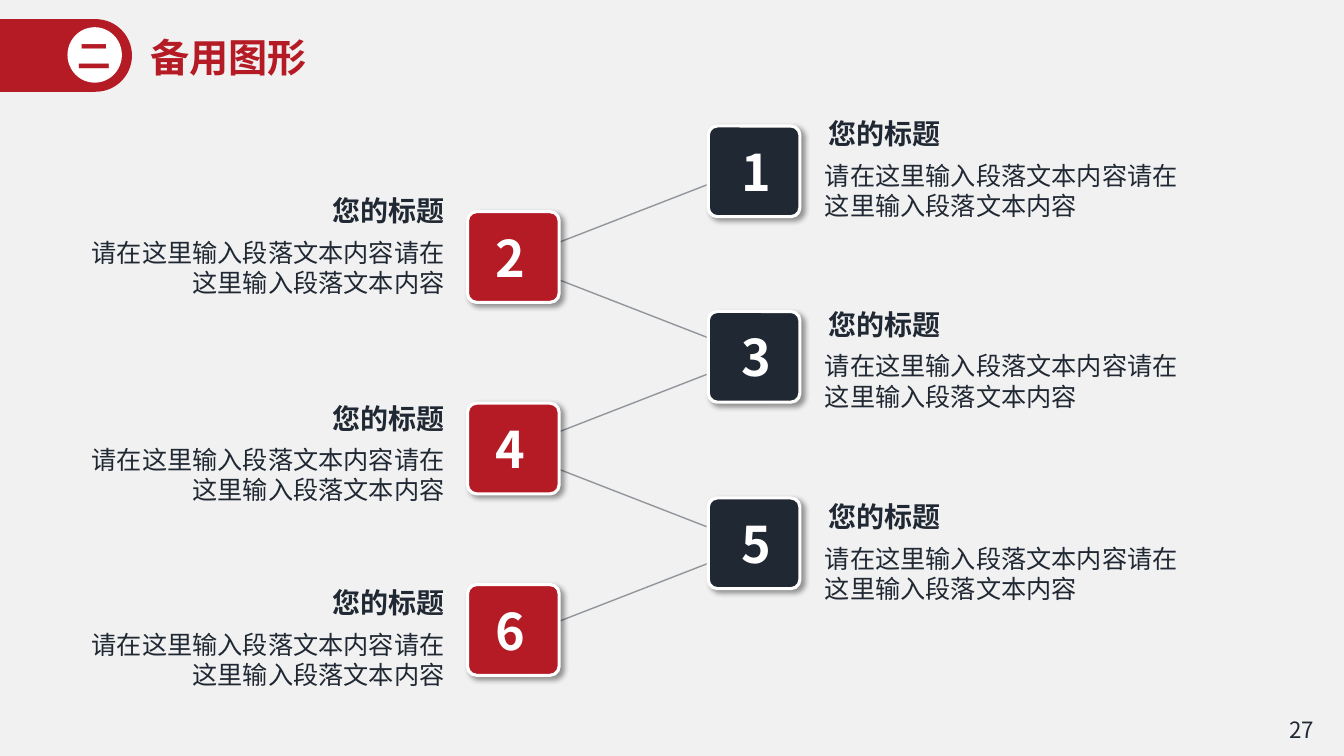
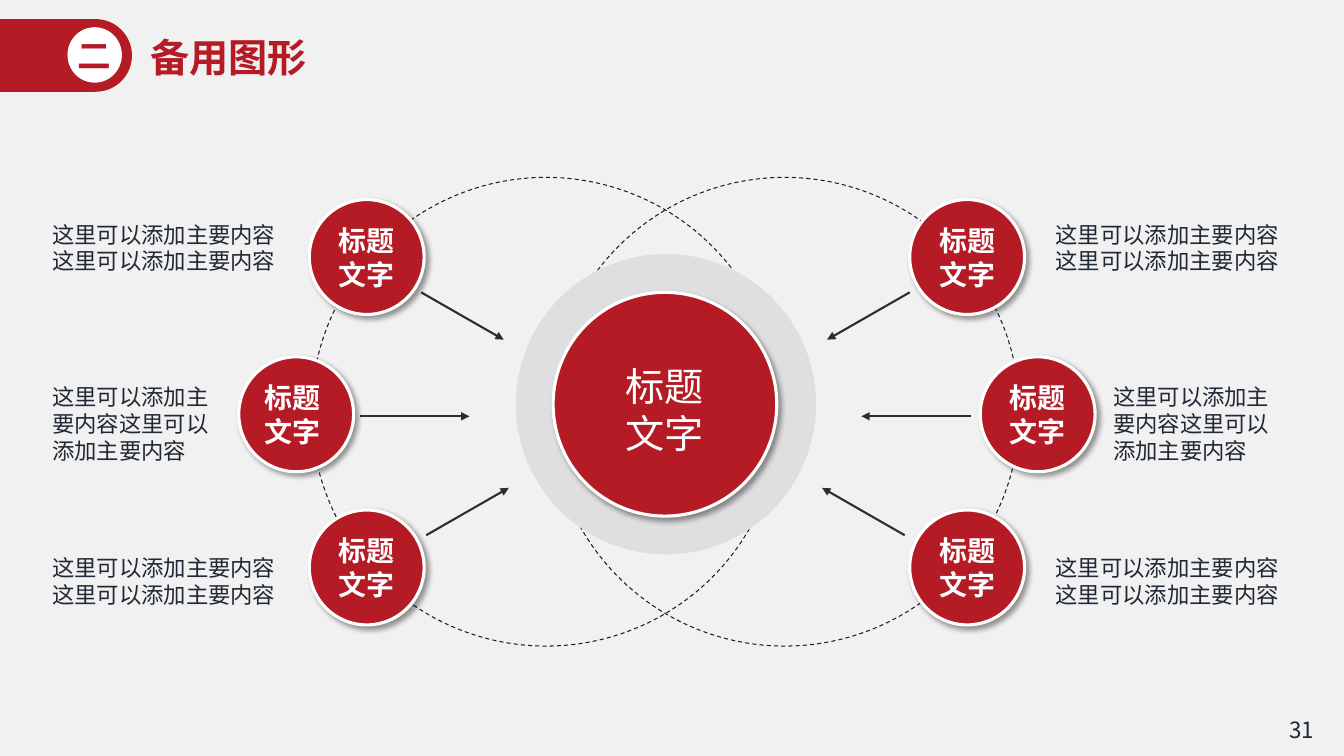
from math import cos, pi, sin

from lxml.etree import SubElement
from pptx import Presentation
from pptx.dml.color import RGBColor
from pptx.enum.dml import MSO_LINE
from pptx.enum.shapes import MSO_CONNECTOR, MSO_SHAPE
from pptx.enum.text import MSO_ANCHOR, MSO_AUTO_SIZE, PP_ALIGN
from pptx.oxml.ns import qn
from pptx.util import Inches, Pt

RED = RGBColor(0xB5, 0x1B, 0x25)
NAVY = RGBColor(0x20, 0x28, 0x33)
WHITE = RGBColor(0xFF, 0xFF, 0xFF)
PAPER = RGBColor(0xF1, 0xF1, 0xF1)
HALO = RGBColor(0xDF, 0xDF, 0xE1)
GREY = RGBColor(0x91, 0x95, 0x9C)
ARROW = RGBColor(0x2E, 0x2C, 0x2C)
RING = RGBColor(0x18, 0x1E, 0x26)
FONT = "Noto Sans CJK SC"

HEADING = {"size": Pt(20), "bold": True}
BADGE = {"size": Pt(20), "bold": True, "color": WHITE}
NUMBER = {"size": Pt(36), "bold": True, "color": WHITE}


class Deck:
    """Holds the style and the slide being drawn."""

    def __init__(self):
        self.prs = Presentation()
        self.prs.slide_width, self.prs.slide_height = Inches(13.34), Inches(7.5)
        fill = self.prs.slide_master.background.fill
        fill.solid()
        fill.fore_color.rgb = PAPER

    def new_slide(self, section, title, page):
        self.s = self.prs.slides.add_slide(self.prs.slide_layouts[5])
        sp = self.s.shapes.title
        sp.left, sp.top, sp.width, sp.height = map(Inches, (1.39, 0.28, 3.05, 0.57))
        self.set_text(sp.text_frame, title, {"size": Pt(28), "bold": True, "color": RED})
        self.tag()
        self.shape(MSO_SHAPE.OVAL, (0.67, 0.27, 0.54, 0.55), WHITE, text=section,
                   style={"size": Pt(24), "bold": True, "color": RED})
        self.text((12.67, 7.06, 0.5, 0.37), page, {"size": Pt(16)}, PP_ALIGN.CENTER)

    def set_text(self, tf, text, style, align=PP_ALIGN.LEFT, **frame):
        frame = {"word_wrap": True, "auto_size": MSO_AUTO_SIZE.NONE,
                 "vertical_anchor": MSO_ANCHOR.TOP, **frame}
        for name, value in frame.items():
            setattr(tf, name, value)
        p = tf.paragraphs[0]
        p.alignment = align
        r = p.add_run()
        r.text = text
        font = {"name": FONT, "bold": False, **style}
        r.font.color.rgb = font.pop("color", NAVY)
        for name, value in font.items():
            setattr(r.font, name, value)
        SubElement(r.font._element, qn("a:ea"), typeface=FONT)

    def text(self, box, text, style, align=PP_ALIGN.LEFT):
        sp = self.s.shapes.add_textbox(*map(Inches, box))
        self.set_text(sp.text_frame, text, style, align)

    def tag(self):
        # Band from the left edge with a half-round right end
        radius, cx, cy = 0.36, 0.95, 0.55
        angles = [pi * (i / 40 - 0.5) for i in range(41)]
        arc = [(Inches(cx + radius * cos(a)), Inches(cy + radius * sin(a))) for a in angles]
        builder = self.s.shapes.build_freeform(0, Inches(cy - radius))
        builder.add_line_segments(arc + [(0, Inches(cy + radius))])
        self.paint(builder.convert_to_shape(), RED)

    def paint(self, sp, fill=None):
        sp.shadow.inherit = False
        sp.line.fill.background()
        if fill is None:
            sp.fill.background()
        else:
            sp.fill.solid()
            sp.fill.fore_color.rgb = fill

    def shape(self, kind, box, fill=None, text=None, style=None, margins=(0, 0, 0, 0)):
        sp = self.s.shapes.add_shape(kind, *map(Inches, box))
        self.paint(sp, fill)
        if text:
            sides = ("margin_left", "margin_top", "margin_right", "margin_bottom")
            self.set_text(sp.text_frame, text, style, PP_ALIGN.CENTER,
                          vertical_anchor=MSO_ANCHOR.MIDDLE,
                          **dict(zip(sides, map(Inches, margins))))
        return sp

    def raised(self, *args, **kwargs):
        """A shape with a white rim and a soft shadow."""
        sp = self.shape(*args, **kwargs)
        sp.line.color.rgb = WHITE
        sp.line.width = Pt(2.25)
        effects = sp._element.spPr.find(qn("a:effectLst"))
        shadow = SubElement(effects, qn("a:outerShdw"), blurRad=str(int(Pt(4))),
                            dist=str(int(Pt(3))), dir="2700000", algn="tl",
                            rotWithShape="0")
        color = SubElement(shadow, qn("a:srgbClr"), val="000000")
        SubElement(color, qn("a:alpha"), val="40000")
        return sp

    def ring(self, box):
        sp = self.shape(MSO_SHAPE.OVAL, box)
        sp.line.color.rgb = RING
        sp.line.width = Pt(0)
        sp.line.dash_style = MSO_LINE.DASH

    def line(self, start, end, color, width, arrow=False):
        c = self.s.shapes.add_connector(MSO_CONNECTOR.STRAIGHT, *map(Inches, start + end))
        c.line.color.rgb = color
        c.line.width = Pt(width)
        props = c._element.spPr
        if arrow:
            SubElement(props.find(qn("a:ln")), qn("a:tailEnd"), type="triangle")
        SubElement(props, qn("a:effectLst"))


def zigzag_slide(deck):
    deck.new_slide("二", "备用图形", "27")
    # Top of each numbered tile and of its heading
    steps = [(1.25, 1.11), (2.1, 1.87), (3.09, 3), (4, 3.93), (4.94, 4.91), (5.8, 5.76)]
    # Zigzag behind the tiles
    nodes = [((7.49, 5.07)[i % 2], 1.65 + 0.94 * i) for i in range(len(steps))]
    for start, end in zip(nodes, nodes[1:]):
        deck.line(start, end, GREY, 1)
    # Odd steps on the right, even steps on the left
    for number, (tile_top, top) in enumerate(steps, 1):
        if number % 2:
            x, fill, heading_x, body_x = 7.03, NAVY, 8.12, 8.09
            align, margins = PP_ALIGN.LEFT, (0.05, 0, 0, 0)
        else:
            x, fill, heading_x, body_x = 4.64, RED, 2.33, 0.78
            align, margins = PP_ALIGN.RIGHT, (0, 0, 0.05, 0)
        sp = deck.raised(MSO_SHAPE.ROUNDED_RECTANGLE, (x, tile_top, 0.91, 0.9), fill,
                         text=str(number), style=NUMBER, margins=margins)
        sp.adjustments[0] = 0.1
        deck.text((heading_x, top, 2.18, 0.44), "您的标题", HEADING, align)
        deck.text((body_x, top + 0.43, 3.73, 0.71),
                  "请在这里输入段落文本内容请在这里输入段落文本内容", {"size": Pt(18)}, align)


def converging_slide(deck):
    deck.new_slide("二", "备用图形", "31")
    for x in (3.09, 5.46):
        deck.ring((x, 1.76, 4.66, 4.65))
    # Left half: badge, arrow start and end, note top and size, text margins
    size = 1.14
    rows = [
        ((3.07, 1.98), (4.18, 2.9), (5, 3.37), (2.14, 2.52, 0.64), (0, 0, 0, 0)),
        ((2.37, 3.54), (3.57, 4.13), (4.66, 4.13), (3.75, 1.95, 0.91), (0, 0, 0.07, 0)),
        ((3.07, 5.06), (4.23, 5.31), (5.05, 4.84), (5.45, 2.52, 0.64), (0, 0, 0, 0)),
    ]
    for (x, y), start, end, (top, width, height), margins in rows:
        for right in (False, True):
            note_x = 0.42
            if right:
                # Reflect the row to the other side
                x, note_x = 13.24 - size - x, 13.32 - width - note_x
                start, end = [(13.21 - px, py) for px, py in (start, end)]
                margins = (0, 0, 0, 0)
            deck.line(start, end, ARROW, 1.5, arrow=True)
            deck.text((note_x, top, width, height),
                      "这里可以添加主要内容这里可以添加主要内容", {"size": Pt(16)})
            deck.raised(MSO_SHAPE.OVAL, (x, y, size, size), RED, text="标题文字",
                        style=BADGE, margins=margins)
    # Centre
    deck.shape(MSO_SHAPE.OVAL, (5.12, 2.52, 2.98, 2.98), HALO)
    deck.raised(MSO_SHAPE.OVAL, (5.49, 2.9, 2.22, 2.22), RED, text="标题文字",
                style={"size": Pt(28), "color": WHITE}, margins=(0.25, 0.1, 0.25, 0))


def main():
    deck = Deck()
    zigzag_slide(deck)
    converging_slide(deck)
    deck.prs.save("out.pptx")


if __name__ == "__main__":
    main()
